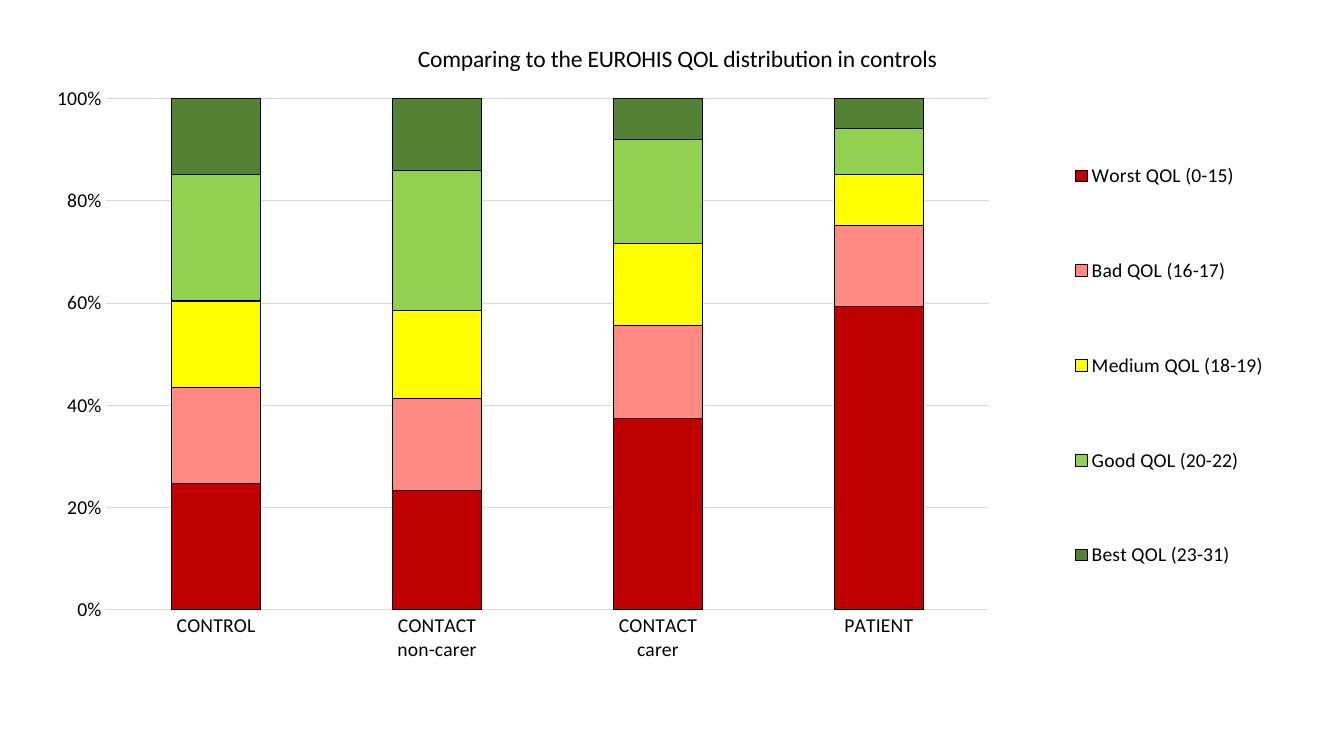
from lxml import etree
from pptx import Presentation
from pptx.chart.data import CategoryChartData
from pptx.dml.color import RGBColor
from pptx.enum.chart import XL_CHART_TYPE as ChartType
from pptx.enum.chart import XL_LEGEND_POSITION as LegendPosition
from pptx.enum.chart import XL_TICK_MARK as TickMark
from pptx.oxml.ns import qn
from pptx.util import Inches, Pt

BLACK = RGBColor(0x00, 0x00, 0x00)
PALE_GREY = RGBColor(0xD9, 0xD9, 0xD9)
DARK_RED = RGBColor(0xC0, 0x00, 0x00)
PINK = RGBColor(0xFF, 0x89, 0x83)
YELLOW = RGBColor(0xFF, 0xFF, 0x00)
LIGHT_GREEN = RGBColor(0x92, 0xD0, 0x50)
DARK_GREEN = RGBColor(0x54, 0x82, 0x35)

TITLE = "Comparing to the EUROHIS QOL distribution in controls"
GROUPS = ["CONTROL", "CONTACT\nnon-carer", "CONTACT\ncarer", "PATIENT"]
BANDS = [
    ("Worst QOL (0-15)", (25, 23, 37, 60), DARK_RED),
    ("Bad QOL (16-17)", (19, 18, 18, 16), PINK),
    ("Medium QOL (18-19)", (17, 17, 16, 10), YELLOW),
    ("Good QOL (20-22)", (25, 27, 20, 9), LIGHT_GREEN),
    ("Best QOL (23-31)", (15, 14, 8, 6), DARK_GREEN),
]

FONT = "Calibri"
LINE_WIDTH = Pt(0.75)
SLIDE_WIDTH, SLIDE_HEIGHT = 13.33, 7.5
CHART_LEFT, CHART_TOP = 0.11, 0.18

# Percentages of the chart's width and height
TITLE_AREA = {"x": 30.2, "y": 2.7}
PLOT_AREA = {"x": 7.1, "y": 10.9, "w": 66.3, "h": 69.3}
LEGEND_AREA = {"x": 77.9, "y": 10.2, "w": 18, "h": 73.8}


def set_font(font, size):
    font.name = FONT
    font.size = Pt(size)
    font.bold = False
    font.color.rgb = BLACK


def set_line(line, color):
    line.color.rgb = color
    line.width = LINE_WIDTH


def place(part, area, before, inner=False):
    """Lay out a chart part by hand, ahead of its first child named in before."""
    for old in part.findall(qn("c:layout")):
        part.remove(old)
    layout = etree.Element(qn("c:layout"))
    manual = etree.SubElement(layout, qn("c:manualLayout"))
    settings = [("layoutTarget", "inner")] if inner else []
    settings += [("xMode", "edge"), ("yMode", "edge")]
    settings += [(key, f"{percent / 100:.3f}") for key, percent in area.items()]
    for tag, value in settings:
        etree.SubElement(manual, qn("c:" + tag)).set("val", value)
    part.find(qn(before)).addprevious(layout)


def add_chart(page):
    data = CategoryChartData()
    data.categories = GROUPS
    for name, values, _ in BANDS:
        data.add_series(name, values)
    frame = page.shapes.add_chart(
        ChartType.COLUMN_STACKED_100,
        Inches(CHART_LEFT), Inches(CHART_TOP),
        Inches(SLIDE_WIDTH - CHART_LEFT), Inches(SLIDE_HEIGHT - CHART_TOP), data)
    return frame.chart


def style_columns(chart):
    plot = chart.plots[0]
    plot.gap_width = 150
    plot.overlap = 100
    plot.vary_by_categories = False
    for series, (_, _, color) in zip(plot.series, BANDS):
        series.format.fill.solid()
        series.format.fill.fore_color.rgb = color
        set_line(series.format.line, BLACK)
    place(chart.element.find(".//" + qn("c:plotArea")), PLOT_AREA, "c:barChart", inner=True)


def style_axes(chart):
    for axis in (chart.category_axis, chart.value_axis):
        axis.major_tick_mark = TickMark.NONE
        axis.minor_tick_mark = TickMark.NONE
        set_font(axis.tick_labels.font, 14)
    set_line(chart.category_axis.format.line, PALE_GREY)
    shares = chart.value_axis
    shares.minimum_scale, shares.maximum_scale, shares.major_unit = 0, 1, 0.2
    shares.tick_labels.number_format = "0%"
    shares.tick_labels.number_format_is_linked = False
    shares.format.line.fill.background()
    set_line(shares.major_gridlines.format.line, PALE_GREY)


def style_title(chart):
    chart.has_title = True
    span = chart.chart_title.text_frame.paragraphs[0].add_run()
    span.text = TITLE
    set_font(span.font, 16.8)
    place(chart.element.find(".//" + qn("c:title")), TITLE_AREA, "c:overlay")


def style_legend(chart):
    chart.has_legend = True
    legend = chart.legend
    legend.position = LegendPosition.BOTTOM
    legend.include_in_layout = False
    set_font(legend.font, 14)
    place(chart.element.find(".//" + qn("c:legend")), LEGEND_AREA, "c:overlay")


def main():
    deck = Presentation()
    deck.slide_width, deck.slide_height = Inches(SLIDE_WIDTH), Inches(SLIDE_HEIGHT)
    page = deck.slides.add_slide(deck.slide_layouts.get_by_name("Blank"))
    chart = add_chart(page)
    set_font(chart.font, 14)
    style_columns(chart)
    style_axes(chart)
    style_title(chart)
    style_legend(chart)
    deck.save("out.pptx")


if __name__ == "__main__":
    main()
